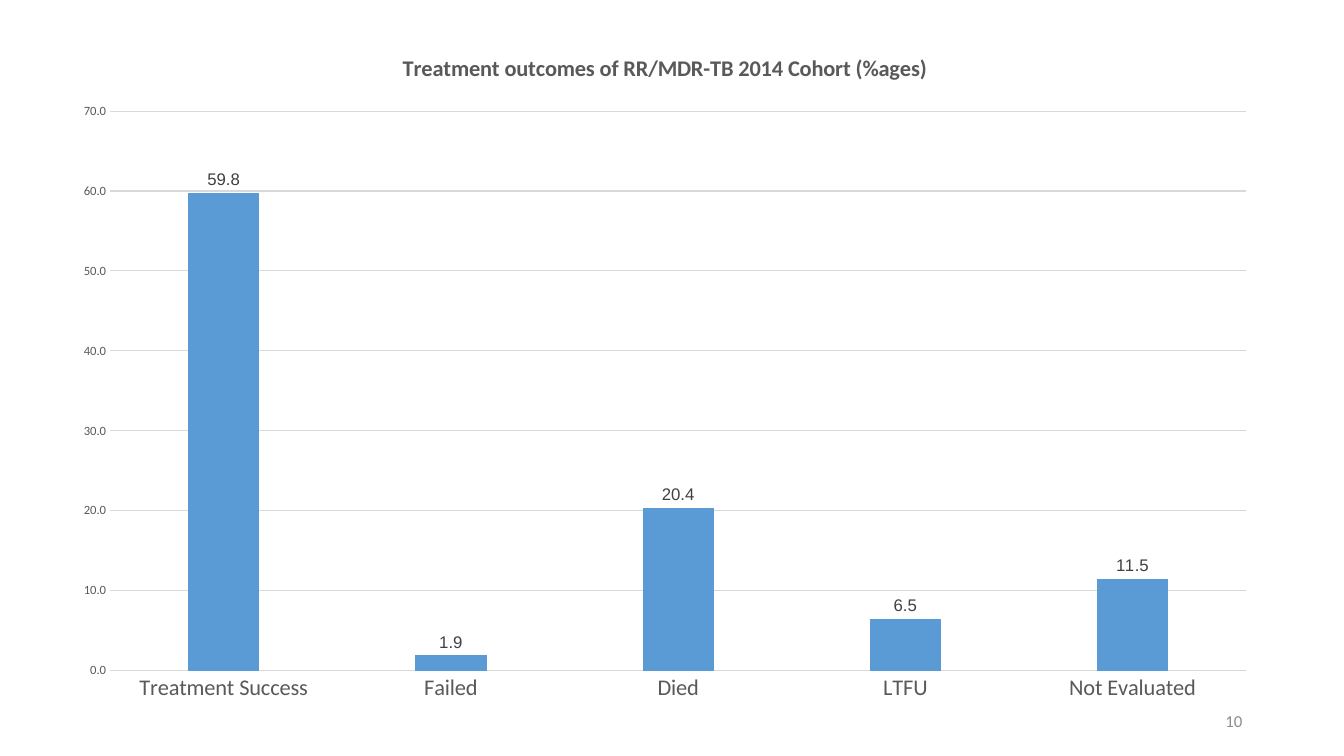
from pptx import Presentation
from pptx.chart.data import CategoryChartData
from pptx.dml.color import RGBColor
from pptx.enum.chart import XL_CHART_TYPE, XL_LABEL_POSITION, XL_TICK_MARK
from pptx.enum.text import MSO_ANCHOR, PP_ALIGN
from pptx.util import Inches, Pt

OUTCOMES = {
    "Treatment Success": 59.8,
    "Failed": 1.9,
    "Died": 20.4,
    "LTFU": 6.5,
    "Not Evaluated": 11.5,
}
BAR_BLUE = "5B9BD5"
TEXT_GREY = "595959"
LABEL_GREY = "404040"
LINE_GREY = "D9D9D9"
NUMBER_GREY = "8C8C8C"


def rgb(value):
    return RGBColor.from_string(value)


def style_font(font, size, color, name="Calibri", bold=False):
    font.name = name
    font.size = Pt(size)
    font.bold = bold
    font.color.rgb = rgb(color)


def style_line(line, color, width=0.75):
    line.color.rgb = rgb(color)
    line.width = Pt(width)


def style_axes(chart):
    outcome_axis, percent_axis = chart.category_axis, chart.value_axis
    for axis, size in ((outcome_axis, 16), (percent_axis, 9)):
        axis.major_tick_mark = XL_TICK_MARK.NONE
        axis.minor_tick_mark = XL_TICK_MARK.NONE
        style_font(axis.tick_labels.font, size, TEXT_GREY)
    style_line(outcome_axis.format.line, LINE_GREY)

    percent_axis.minimum_scale = 0
    percent_axis.maximum_scale = 70
    percent_axis.major_unit = 10
    percent_axis.format.line.fill.background()
    percent_axis.has_major_gridlines = True
    style_line(percent_axis.major_gridlines.format.line, LINE_GREY)
    percent_axis.tick_labels.number_format = "0.0"
    percent_axis.tick_labels.number_format_is_linked = False


def style_bars(plot):
    plot.gap_width = 219
    plot.overlap = -27
    plot.vary_by_categories = False
    bars = plot.series[0]
    bars.format.fill.solid()
    bars.format.fill.fore_color.rgb = rgb(BAR_BLUE)
    labels = bars.data_labels
    labels.show_value = True
    labels.position = XL_LABEL_POSITION.OUTSIDE_END
    labels.number_format = "0.0"
    labels.number_format_is_linked = False
    style_font(labels.font, 12, LABEL_GREY, name="Arial")


def add_outcomes_chart(slide, left, top, width, height):
    outcomes = CategoryChartData(number_format="0.0")
    outcomes.categories = list(OUTCOMES)
    outcomes.add_series("Series 1", list(OUTCOMES.values()))
    chart = slide.shapes.add_chart(
        XL_CHART_TYPE.COLUMN_CLUSTERED,
        Inches(left), Inches(top), Inches(width), Inches(height), outcomes,
    ).chart
    chart.has_legend = False
    style_font(chart.font, 10, "000000")

    chart.has_title = True
    heading = chart.chart_title.text_frame
    heading.text = "Treatment outcomes of RR/MDR-TB 2014 Cohort (%ages)"
    style_font(heading.paragraphs[0].runs[0].font, 16, TEXT_GREY, bold=True)
    chart.chart_title.include_in_layout = False

    style_axes(chart)
    style_bars(chart.plots[0])


def add_page_number(slide, number, left, top, width, height):
    frame = slide.shapes.add_textbox(
        Inches(left), Inches(top), Inches(width), Inches(height)
    ).text_frame
    frame.word_wrap = True
    frame.vertical_anchor = MSO_ANCHOR.MIDDLE
    frame.text = str(number)
    paragraph = frame.paragraphs[0]
    paragraph.alignment = PP_ALIGN.RIGHT
    style_font(paragraph.runs[0].font, 12, NUMBER_GREY)


def main():
    presentation = Presentation()
    presentation.slide_width = Inches(13.33)
    presentation.slide_height = Inches(7.5)
    slide = presentation.slides.add_slide(presentation.slide_layouts[6])
    add_outcomes_chart(slide, 0.59, 0.3, 12.01, 6.8)
    add_page_number(slide, 10, 9.42, 6.95, 3, 0.4)
    presentation.save("out.pptx")


if __name__ == "__main__":
    main()
